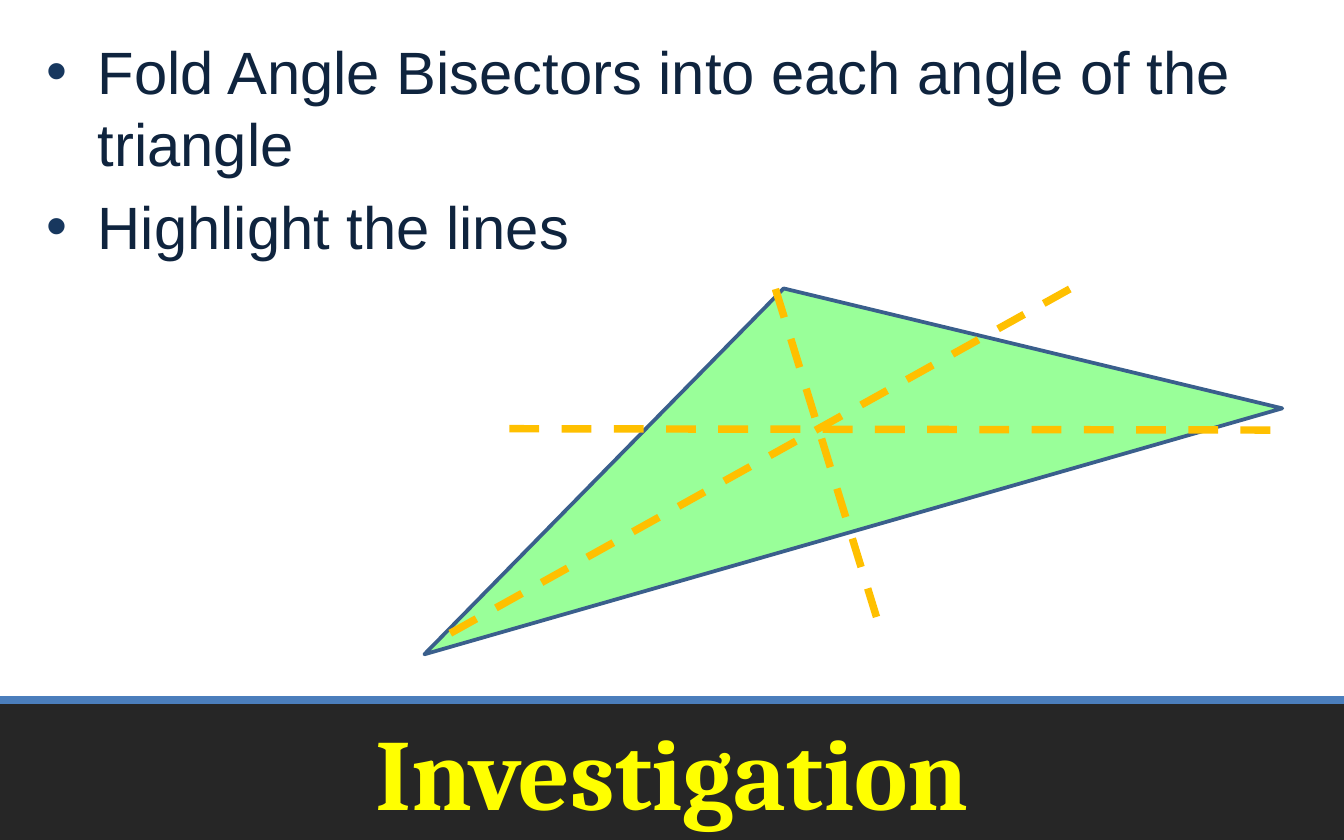
from typing import NamedTuple

from lxml import etree
from pptx import Presentation
from pptx.dml.color import RGBColor
from pptx.enum import dml, shapes, text
from pptx.oxml.ns import qn
from pptx.util import Emu, Pt

PX = 9144  # 100 px to the inch


class Line(NamedTuple):
    x1: int
    y1: int
    x2: int
    y2: int
    color: str = "FFC000"
    dashed: bool = True


BISECTORS = [
    Line(577, 215, 654, 465),
    Line(796, 215, 321, 479),
    Line(379, 319, 959, 320),
]
STEPS = [
    "Fold Angle Bisectors into each angle of the triangle",
    "Highlight the lines",
]


def px(*values: int) -> list[Emu]:
    return [Emu(v * PX) for v in values]


def rgb(color: str) -> RGBColor:
    return RGBColor.from_string(color)


def add_shape(slide, kind, box, fill: str, line: str | None = None):
    sp = slide.shapes.add_shape(kind, *px(*box))
    sp.shadow.inherit = False
    sp.fill.solid()
    sp.fill.fore_color.rgb = rgb(fill)
    if line:
        sp.line.color.rgb = rgb(line)
        sp.line.width = Pt(2)
    else:
        sp.line.fill.background()
    return sp


def add_line(slide, line: Line) -> None:
    cx = slide.shapes.add_connector(
        shapes.MSO_CONNECTOR.STRAIGHT, *px(line.x1, line.y1, line.x2, line.y2))
    cx.line.color.rgb = rgb(line.color)
    cx.line.width = Pt(4)
    if line.dashed:
        cx.line.dash_style = dml.MSO_LINE.DASH
    etree.SubElement(cx._element.spPr, qn("a:effectLst"))


def add_bullet(p, color: str, indent: int) -> None:
    pPr = p._p.get_or_add_pPr()
    pPr.set("marL", str(indent * PX))
    pPr.set("indent", str(-indent * PX))
    clr = etree.SubElement(pPr, qn("a:buClr"))
    etree.SubElement(clr, qn("a:srgbClr"), val=color)
    etree.SubElement(pPr, qn("a:buFont"), typeface="Arial")
    etree.SubElement(pPr, qn("a:buChar"), char="•")


def add_text(slide, paragraphs: list[str], box, *, font: str, size: int,
             color: str, bold=False, align=text.PP_ALIGN.LEFT,
             anchor=text.MSO_ANCHOR.TOP, before=0.0,
             bullet: str | None = None) -> None:
    tf = slide.shapes.add_textbox(*px(*box)).text_frame
    tf.word_wrap = True
    tf.vertical_anchor = anchor
    for i, content in enumerate(paragraphs):
        p = tf.add_paragraph() if i else tf.paragraphs[0]
        p.alignment = align
        p.space_before = Pt(before)
        if bullet:
            add_bullet(p, bullet, 38)
        r = p.add_run()
        r.text = content
        r.font.name, r.font.size, r.font.bold = font, Pt(size), bold
        r.font.color.rgb = rgb(color)


def main() -> None:
    prs = Presentation()
    prs.slide_width, prs.slide_height = px(1000, 625)
    slide = prs.slides.add_slide(prs.slide_layouts[6])

    # Title band
    add_shape(slide, shapes.MSO_SHAPE.RECTANGLE, (0, 521, 1000, 104), "262626")
    add_line(slide, Line(0, 521, 1000, 521, "4B7EBC", False))
    add_text(slide, ["Investigation"], (25, 521, 950, 104), font="Cambria",
             size=54, color="FFFF00", bold=True, align=text.PP_ALIGN.CENTER,
             anchor=text.MSO_ANCHOR.MIDDLE)

    # Instructions
    add_text(slide, STEPS, (25, 21, 950, 493), font="Arial", size=32,
             color="0F243E", before=6.4, bullet="17375E")

    # Triangle with its angle bisectors
    triangle = add_shape(slide, shapes.MSO_SHAPE.ISOSCELES_TRIANGLE,
                         (277, 211, 664, 188), "99FF99", "3A5F8C")
    triangle.rotation = 344
    for bisector in BISECTORS:
        add_line(slide, bisector)

    prs.save("out.pptx")


if __name__ == "__main__":
    main()
